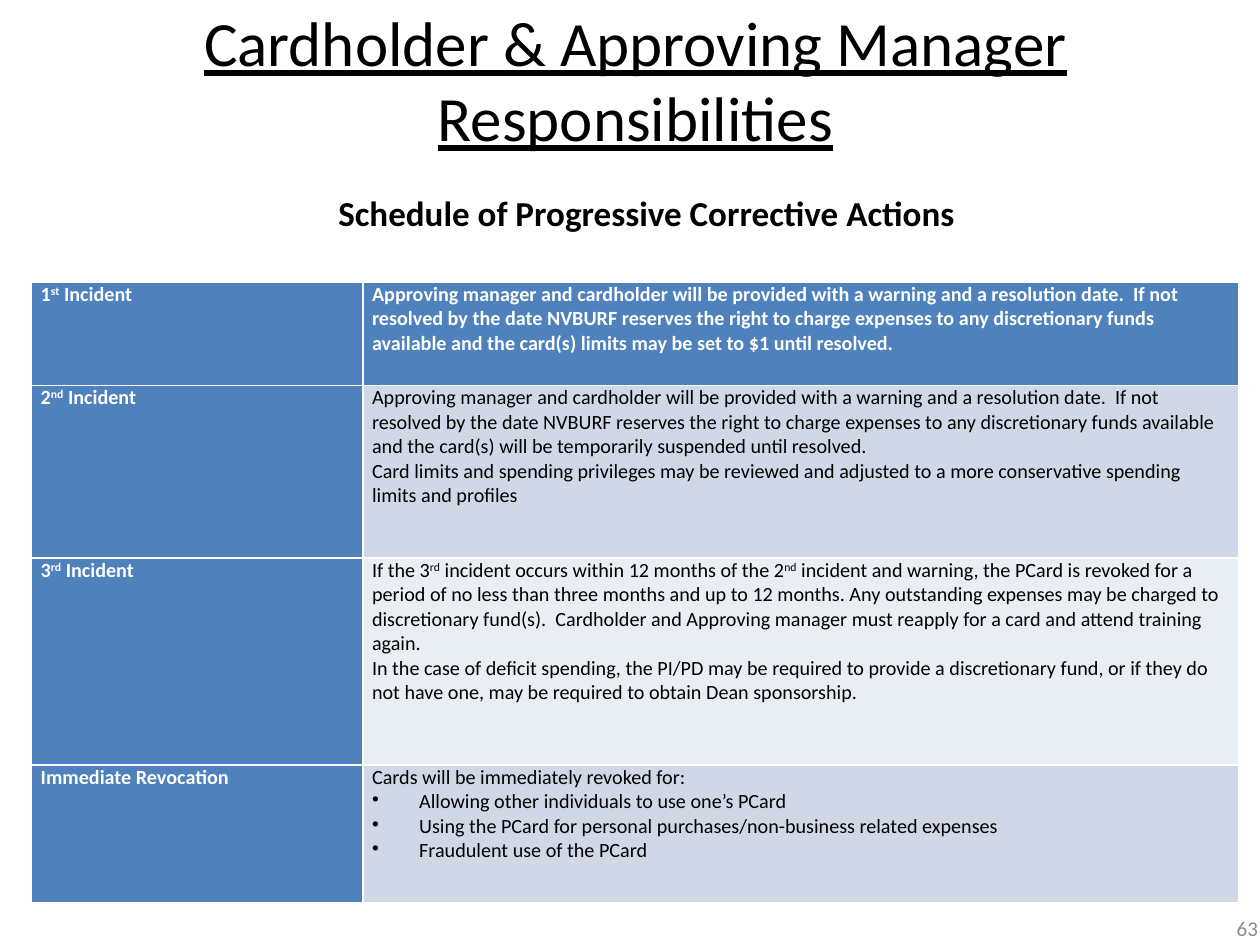
from dataclasses import dataclass

from lxml import etree
from pptx import Presentation
from pptx import util as u
from pptx.dml.color import RGBColor
from pptx.enum import text as t
from pptx.oxml import ns


@dataclass(frozen=True)
class Theme:
    face: str = "Calibri"
    black: str = "000000"
    white: str = "FFFFFF"
    gray: str = "8C8C8C"
    blue: str = "4F81BD"
    bands: tuple[str, ...] = ("D0D8E8", "E9EDF4")
    title: float = 36
    head: float = 20
    body: float = 11.5
    page: float = 12


@dataclass(frozen=True)
class Step:
    name: str
    high: float
    paras: tuple[str, ...]
    bullets: tuple[str, ...] = ()


THEME = Theme()
WARN = (
    "Approving manager and cardholder will be provided with a warning and a "
    "resolution date.\u00a0 If not resolved by the date NVBURF reserves the right to "
    "charge expenses to any discretionary funds available and the card(s) "
)

# Text between carets is superscript.
STEPS = (
    Step("1^st^ Incident", 2.08, (WARN + "limits may be set to $1 until resolved.",)),
    Step("2^nd^ Incident", 3.48, (
        WARN + "will be temporarily suspended until resolved.",
        "Card limits and spending privileges may be reviewed and adjusted to a "
        "more conservative spending limits and profiles",
    )),
    Step("3^rd^ Incident", 4.17, (
        "If the 3^rd^ incident occurs within 12 months of the 2^nd^ incident and "
        "warning, the PCard is revoked for a period of no less than three months "
        "and up to 12 months. Any outstanding expenses may be charged to "
        "discretionary fund(s).\u00a0 Cardholder and Approving manager must reapply "
        "for a card and attend training again.",
        "In the case of deficit spending, the PI/PD may be required to provide a "
        "discretionary fund, or if they do not have one, may be required to "
        "obtain Dean sponsorship.",
    )),
    Step("Immediate Revocation", 2.77, ("Cards will be immediately revoked for:",), (
        "Allowing other individuals to use one’s PCard",
        "Using the PCard for personal purchases/non-business related expenses",
        "Fraudulent use of the PCard",
    )),
)


def style(para, size: float, color: str, bold: bool = False) -> None:
    font = para.font
    font.name, font.size, font.bold = THEME.face, u.Pt(size), bold
    font.color.rgb = RGBColor.from_string(color)


def write(para, words: str) -> None:
    """Add runs, raising each part that stands between carets."""
    for i, part in enumerate(words.split("^")):
        run = para.add_run()
        run.text = part
        if i % 2:
            run._r.get_or_add_rPr().set("baseline", "30000")


def dot(para) -> None:
    """Give the paragraph a bullet with a hanging indent."""
    props = para._p.get_or_add_pPr()
    wide = u.Cm(0.95)
    props.set("marL", str(wide))
    props.set("indent", str(-wide))
    mark = etree.Element(ns.qn("a:buChar"), char="•")
    fonts = props.find(ns.qn("a:defRPr"))
    if fonts is None:
        props.append(mark)
    else:
        fonts.addprevious(mark)


def fill(cell, step: Step, paras: tuple[str, ...], bullets: tuple[str, ...],
         back: str, bold: bool) -> None:
    cell.fill.solid()
    cell.fill.fore_color.rgb = RGBColor.from_string(back)
    cell.margin_left = cell.margin_right = u.Cm(0.18)
    cell.margin_top = cell.margin_bottom = 0
    frame = cell.text_frame
    for i, words in enumerate(paras + bullets):
        para = frame.add_paragraph() if i else frame.paragraphs[0]
        write(para, words)
        style(para, THEME.body, THEME.white if bold else THEME.black, bold)
        if i >= len(paras):
            dot(para)


def place(shape, left: float, top: float, wide: float, high: float) -> None:
    shape.left, shape.top = u.Cm(left), u.Cm(top)
    shape.width, shape.height = u.Cm(wide), u.Cm(high)


def label(shape, words: str, size: float, color: str, align, anchor,
          bold: bool = False):
    frame = shape.text_frame
    frame.word_wrap = True
    frame.vertical_anchor = anchor
    para = frame.paragraphs[0]
    para.alignment = align
    write(para, words)
    style(para, size, color, bold)
    return para


def grid(slide) -> None:
    frame = slide.shapes.add_table(
        len(STEPS), 2, u.Cm(0.64), u.Cm(5.69), u.Cm(24.33),
        u.Cm(sum(step.high for step in STEPS)))
    table = frame.table
    table.first_col = True
    for col, wide in zip(table.columns, (6.68, 17.65)):
        col.width = u.Cm(wide)
    for i, step in enumerate(STEPS):
        table.rows[i].height = u.Cm(step.high)
        first = i == 0
        band = THEME.blue if first else THEME.bands[(i - 1) % 2]
        fill(table.cell(i, 0), step, (step.name,), (), THEME.blue, True)
        fill(table.cell(i, 1), step, step.paras, step.bullets, band, first)


def main() -> None:
    deck = Presentation()
    deck.slide_width, deck.slide_height = u.Cm(25.4), u.Cm(19.05)
    slide = deck.slides.add_slide(deck.slide_layouts[5])
    mid, side = t.MSO_ANCHOR.MIDDLE, t.PP_ALIGN

    title = slide.shapes.title
    place(title, 1.06, 0, 23.5, 3.18)
    para = label(title, "Cardholder & Approving Manager Responsibilities",
                 THEME.title, THEME.black, side.CENTER, mid)
    para.font.underline = True

    page = slide.shapes.add_textbox(0, 0, 0, 0)
    place(page, 19.69, 18.2, 5.92, 1.02)
    label(page, "63", THEME.page, THEME.gray, side.RIGHT, mid)

    grid(slide)

    head = slide.shapes.add_textbox(0, 0, 0, 0)
    place(head, 2.34, 3.73, 21.39, 1.96)
    label(head, "Schedule of Progressive Corrective Actions",
          THEME.head, THEME.black, side.CENTER, t.MSO_ANCHOR.TOP, True)

    deck.save("out.pptx")


if __name__ == "__main__":
    main()
